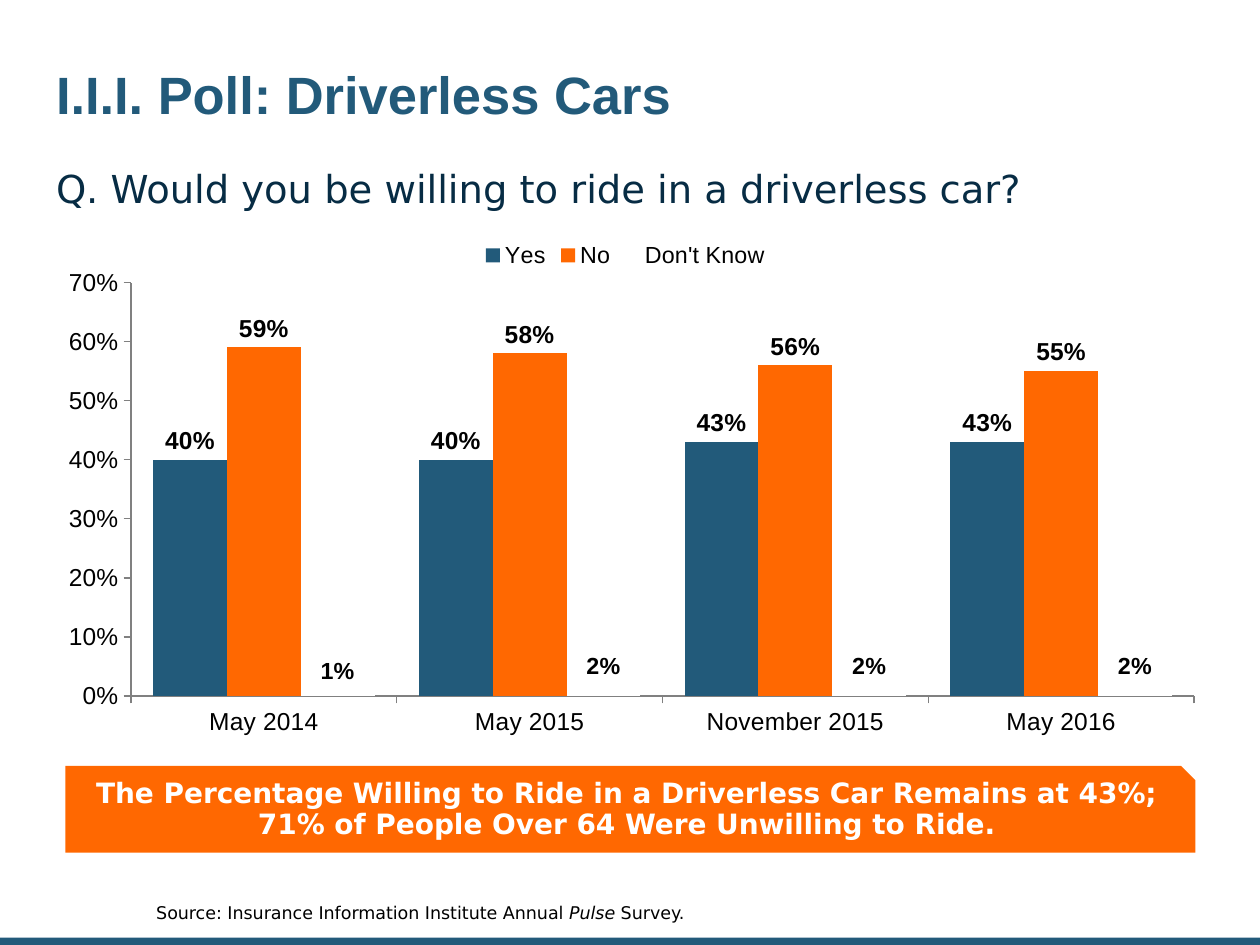
from pptx import Presentation
from pptx.chart.data import CategoryChartData
from pptx.dml.color import RGBColor
from pptx.enum.chart import XL_CHART_TYPE, XL_LABEL_POSITION, XL_LEGEND_POSITION, XL_TICK_MARK
from pptx.enum.shapes import MSO_SHAPE
from pptx.enum.text import MSO_ANCHOR, PP_ALIGN
from pptx.oxml import parse_xml
from pptx.oxml.ns import nsdecls
from pptx.util import Cm, Pt

COLUMNS = XL_CHART_TYPE.COLUMN_CLUSTERED
ABOVE_BAR = XL_LABEL_POSITION.OUTSIDE_END
LEGEND_TOP = XL_LEGEND_POSITION.TOP
TICK_OUT, TICK_NONE = XL_TICK_MARK.OUTSIDE, XL_TICK_MARK.NONE
RECTANGLE, SNIPPED = MSO_SHAPE.RECTANGLE, MSO_SHAPE.SNIP_1_RECTANGLE
TOP, MIDDLE, BOTTOM = MSO_ANCHOR.TOP, MSO_ANCHOR.MIDDLE, MSO_ANCHOR.BOTTOM
LEFT, CENTER = PP_ALIGN.LEFT, PP_ALIGN.CENTER

BLUE, ORANGE, NAVY = "225A7A", "FF6801", "072C44"
WHITE, BLACK, GREY = "FFFFFF", "000000", "808080"
HEADING_FONT, BODY_FONT = "Arial", "DejaVu Sans"


def rgb(code):
    return RGBColor.from_string(code)


def place(left, top, width, height):
    return Cm(left), Cm(top), Cm(width), Cm(height)


def style_font(font, size, color=BLACK, name=HEADING_FONT, bold=False):
    font.size, font.name, font.bold = Pt(size), name, bold
    font.color.rgb = rgb(color)


class PollSlide:
    """Holds the poll's style and the slide being filled."""

    line_spacing = 0.9
    percent = "0%"

    def __init__(self, deck):
        self.slide = deck.slides.add_slide(deck.slide_layouts[6])

    def fill_frame(self, frame, lines, size, color, name=BODY_FONT, bold=False,
                   anchor=TOP, align=LEFT, insets=(0.13, 0.13, 0.13, 0.13)):
        """Fill one paragraph; each line is a list of (text, italic) runs."""
        frame.word_wrap = True
        frame.vertical_anchor = anchor
        (frame.margin_left, frame.margin_top,
         frame.margin_right, frame.margin_bottom) = map(Cm, insets)
        paragraph = frame.paragraphs[0]
        paragraph.alignment = align
        paragraph.line_spacing = self.line_spacing
        for number, line in enumerate(lines):
            if number:
                paragraph.add_line_break()
            for text, italic in line:
                run = paragraph.add_run()
                run.text = text
                style_font(run.font, size, color, name, bold)
                run.font.italic = italic

    def text(self, box, runs, size, color, **style):
        frame = self.slide.shapes.add_textbox(*place(*box)).text_frame
        self.fill_frame(frame, [runs], size, color, **style)

    def panel(self, preset, box, fill):
        panel = self.slide.shapes.add_shape(preset, *place(*box))
        panel.shadow.inherit = False
        panel.fill.solid()
        panel.fill.fore_color.rgb = rgb(fill)
        panel.line.fill.background()
        return panel

    def callout(self, box, fill, lines, size):
        frame = self.panel(SNIPPED, box, fill).text_frame
        self.fill_frame(frame, [[(line, False)] for line in lines], size, WHITE, bold=True,
                        anchor=MIDDLE, align=CENTER, insets=(0.25, 0.13, 0.25, 0.25))

    def axis(self, axis):
        axis.has_major_gridlines = False
        axis.major_tick_mark, axis.minor_tick_mark = TICK_OUT, TICK_NONE
        axis.format.line.color.rgb = rgb(GREY)
        axis.format.line.width = Pt(0.75)
        style_font(axis.tick_labels.font, 14)

    def chart(self, box, periods, answers, plot_area):
        """Draw the answers, each a (name, shares, colour, label size)."""
        data = CategoryChartData(number_format=self.percent)
        data.categories = periods
        for name, shares, _, _ in answers:
            data.add_series(name, shares)
        chart = self.slide.shapes.add_chart(COLUMNS, *place(*box), data).chart
        style_font(chart.font, 13.3)
        chart.has_title = False
        chart.has_legend = True
        chart.legend.position = LEGEND_TOP
        chart.legend.include_in_layout = False
        style_font(chart.legend.font, 13.3)

        self.axis(chart.category_axis)
        shares_axis = chart.value_axis
        self.axis(shares_axis)
        shares_axis.minimum_scale, shares_axis.maximum_scale = 0, 0.7
        shares_axis.major_unit = 0.1
        shares_axis.tick_labels.number_format = self.percent
        shares_axis.tick_labels.number_format_is_linked = False

        plot = chart.plots[0]
        plot.gap_width, plot.overlap, plot.vary_by_categories = 60, 0, False
        for series, (_, _, color, label_size) in zip(plot.series, answers):
            series.format.fill.solid()
            series.format.fill.fore_color.rgb = rgb(color)
            series.invert_if_negative = False
            labels = series.data_labels
            labels.show_value = True
            labels.position = ABOVE_BAR
            labels.number_format = self.percent
            labels.number_format_is_linked = False
            style_font(labels.font, label_size, bold=True)
        self.fix_plot_area(chart, plot_area)

    def fix_plot_area(self, chart, fractions):
        """Set the inner plot area as x, y, w, h fractions of the chart."""
        area = chart.plots[0]._element.getparent()
        for layout in area.findall("{*}layout"):
            area.remove(layout)
        sizes = "".join(f'<c:{key} val="{value}"/>' for key, value in zip("xywh", fractions))
        area.insert(0, parse_xml(
            f'<c:layout {nsdecls("c")}><c:manualLayout><c:layoutTarget val="inner"/>'
            f'<c:xMode val="edge"/><c:yMode val="edge"/>{sizes}'
            '</c:manualLayout></c:layout>'))


def main():
    deck = Presentation()
    deck.slide_width, deck.slide_height = Cm(25.4), Cm(19.05)
    poll = PollSlide(deck)

    poll.panel(RECTANGLE, (0, 18.9, 25.4, 0.15), BLUE)
    poll.text((1, 0.64, 23.5, 2.64), [("I.I.I. Poll: Driverless Cars", False)],
              30, BLUE, name=HEADING_FONT, bold=True, anchor=MIDDLE)
    poll.text((1, 3.3, 23.5, 1.09),
              [("Q. Would you be willing to ride in a driverless car?", False)], 22, NAVY)
    poll.chart(
        (0.15, 4.6, 24.92, 10.97),
        ["May 2014", "May 2015", "November 2015", "May 2016"],
        [("Yes", (0.40, 0.40, 0.43, 0.43), BLUE, 14),
         ("No", (0.59, 0.58, 0.56, 0.55), ORANGE, 14),
         ("Don't Know", (0.01, 0.02, 0.02, 0.02), WHITE, 13.3)],
        (0.10, 0.10, 0.86, 0.76))
    poll.callout((1.32, 15.44, 22.78, 1.75), ORANGE,
                 ["The Percentage Willing to Ride in a Driverless Car Remains at 43%;",
                  "71% of People Over 64 Were Unwilling to Ride."], 16)
    poll.text((3.15, 17.48, 21.34, 1.14),
              [("Source: Insurance Information Institute Annual ", False),
               ("Pulse", True), (" Survey.", False)],
              10, BLACK, anchor=BOTTOM, insets=(0, 0, 0, 0))

    deck.save("out.pptx")


if __name__ == "__main__":
    main()
